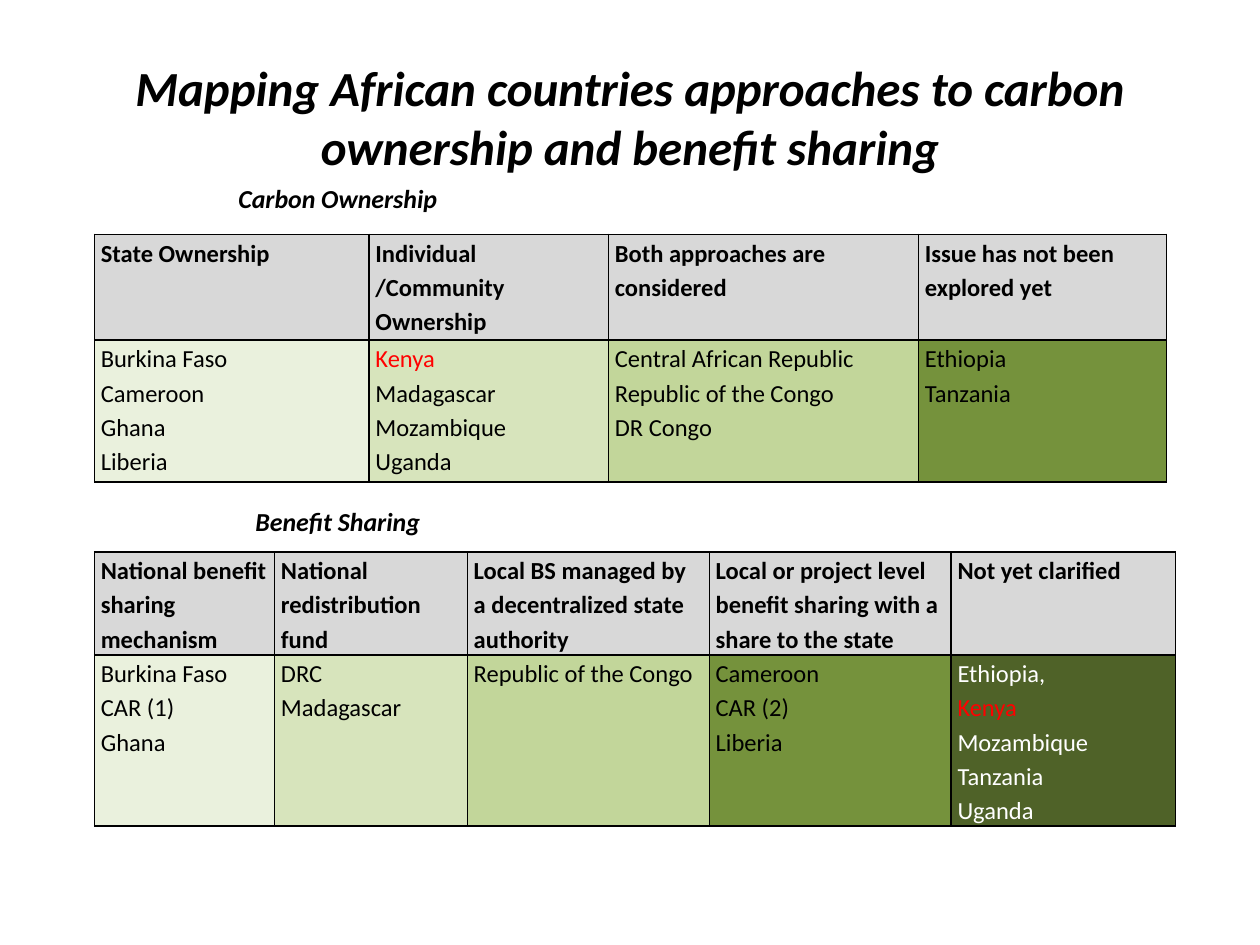
import dataclasses

import lxml.etree
import pptx
import pptx.dml.color
import pptx.enum.text
import pptx.oxml.ns
import pptx.util


@dataclasses.dataclass(frozen=True)
class Theme:
    font: str = "Calibri"
    ink: str = "000000"
    paper: str = "FFFFFF"
    highlight: str = "FF0000"
    heading_fill: str = "D8D8D8"
    greens: tuple = ("EAF1DD", "D7E4BC", "C2D69A", "75923C", "4F6228")
    title_size: float = 28
    caption_size: float = 14.8
    cell_size: float = 14
    border_width: float = 1


THEME = Theme()
SLIDE_WIDTH = pptx.util.Inches(10)
SLIDE_HEIGHT = pptx.util.Inches(7.5)
TABLE_LEFT = 7.5
HIGHLIGHTED_COUNTRY = "Kenya"

OWNERSHIP = [
    ("State Ownership", ["Burkina Faso", "Cameroon", "Ghana", "Liberia"]),
    ("Individual /Community Ownership", ["Kenya", "Madagascar", "Mozambique", "Uganda"]),
    ("Both approaches are considered",
     ["Central African Republic", "Republic of the Congo", "DR Congo"]),
    ("Issue has not been explored yet", ["Ethiopia", "Tanzania"]),
]
BENEFITS = [
    ("National benefit sharing mechanism", ["Burkina Faso", "CAR (1)", "Ghana"]),
    ("National redistribution fund", ["DRC", "Madagascar"]),
    ("Local BS managed by a decentralized state authority", ["Republic of the Congo"]),
    ("Local or project level benefit sharing with a share to the state",
     ["Cameroon", "CAR (2)", "Liberia"]),
    ("Not yet clarified", ["Ethiopia,", "Kenya", "Mozambique", "Tanzania", "Uganda"]),
]


def across(percent):
    return round(SLIDE_WIDTH * percent / 100)


def down(percent):
    return round(SLIDE_HEIGHT * percent / 100)


def rgb(colour):
    return pptx.dml.color.RGBColor.from_string(colour)


def write_text(frame, lines, size, colour=THEME.ink, bold=False, italic=False,
               align=pptx.enum.text.PP_ALIGN.LEFT, spacing=1.0):
    frame.word_wrap = True
    for index, line in enumerate(lines):
        paragraph = frame.add_paragraph() if index else frame.paragraphs[0]
        paragraph.alignment = align
        paragraph.line_spacing = spacing
        run = paragraph.add_run()
        run.text = line
        run.font.name = THEME.font
        run.font.size = pptx.util.Pt(size)
        run.font.bold = bold
        run.font.italic = italic
        run.font.color.rgb = rgb(THEME.highlight if line == HIGHLIGHTED_COUNTRY else colour)


def add_heading(slide, wording, left, top, width, height, size):
    heading = slide.shapes.add_textbox(across(left), down(top), across(width), down(height))
    heading.text_frame.vertical_anchor = pptx.enum.text.MSO_ANCHOR.MIDDLE
    write_text(heading.text_frame, [wording], size, bold=True, italic=True,
               align=pptx.enum.text.PP_ALIGN.CENTER)


def add_borders(cell):
    properties = cell._tc.get_or_add_tcPr()
    qn = pptx.oxml.ns.qn
    for side in ("a:lnL", "a:lnR", "a:lnT", "a:lnB"):
        border = lxml.etree.SubElement(properties, qn(side),
                                       w=str(pptx.util.Pt(THEME.border_width)))
        fill = lxml.etree.SubElement(border, qn("a:solidFill"))
        lxml.etree.SubElement(fill, qn("a:srgbClr"), val=THEME.ink)


def fill_cell(cell, lines, background, **text_format):
    cell.margin_left = cell.margin_right = pptx.util.Inches(0.05)
    cell.margin_top = cell.margin_bottom = 0
    add_borders(cell)
    cell.fill.solid()
    cell.fill.fore_color.rgb = rgb(background)
    write_text(cell.text_frame, lines, THEME.cell_size, spacing=1.15, **text_format)


def add_approach_table(slide, approaches, top, column_widths, row_heights):
    table = slide.shapes.add_table(
        len(row_heights), len(approaches), across(TABLE_LEFT), down(top),
        across(sum(column_widths)), down(sum(row_heights))).table
    table.first_row = table.horz_banding = False
    for row, height in zip(table.rows, row_heights):
        row.height = down(height)
    for index, (approach, countries) in enumerate(approaches):
        table.columns[index].width = across(column_widths[index])
        green = THEME.greens[index]
        country_colour = THEME.paper if green == THEME.greens[-1] else THEME.ink
        fill_cell(table.cell(0, index), [approach], THEME.heading_fill, bold=True)
        fill_cell(table.cell(1, index), countries, green, colour=country_colour)


def main():
    presentation = pptx.Presentation()
    presentation.slide_width = SLIDE_WIDTH
    presentation.slide_height = SLIDE_HEIGHT
    slide = presentation.slides.add_slide(presentation.slide_layouts[6])

    add_heading(slide, "Mapping African countries approaches to carbon ownership "
                "and benefit sharing", 5, 4, 90, 16.67, THEME.title_size)
    for caption, top in (("Carbon Ownership", 19), ("Benefit Sharing", 53.2)):
        add_heading(slide, caption, 6.7, top, 40.2, 4, THEME.caption_size)
    add_approach_table(slide, OWNERSHIP, 24.8, [21.8, 19, 24.6, 19.7], [11.2, 15])
    add_approach_table(slide, BENEFITS, 58.4, [14.3, 15.3, 19.2, 19.2, 17.8], [10.9, 18.1])
    presentation.save("out.pptx")


if __name__ == "__main__":
    main()
